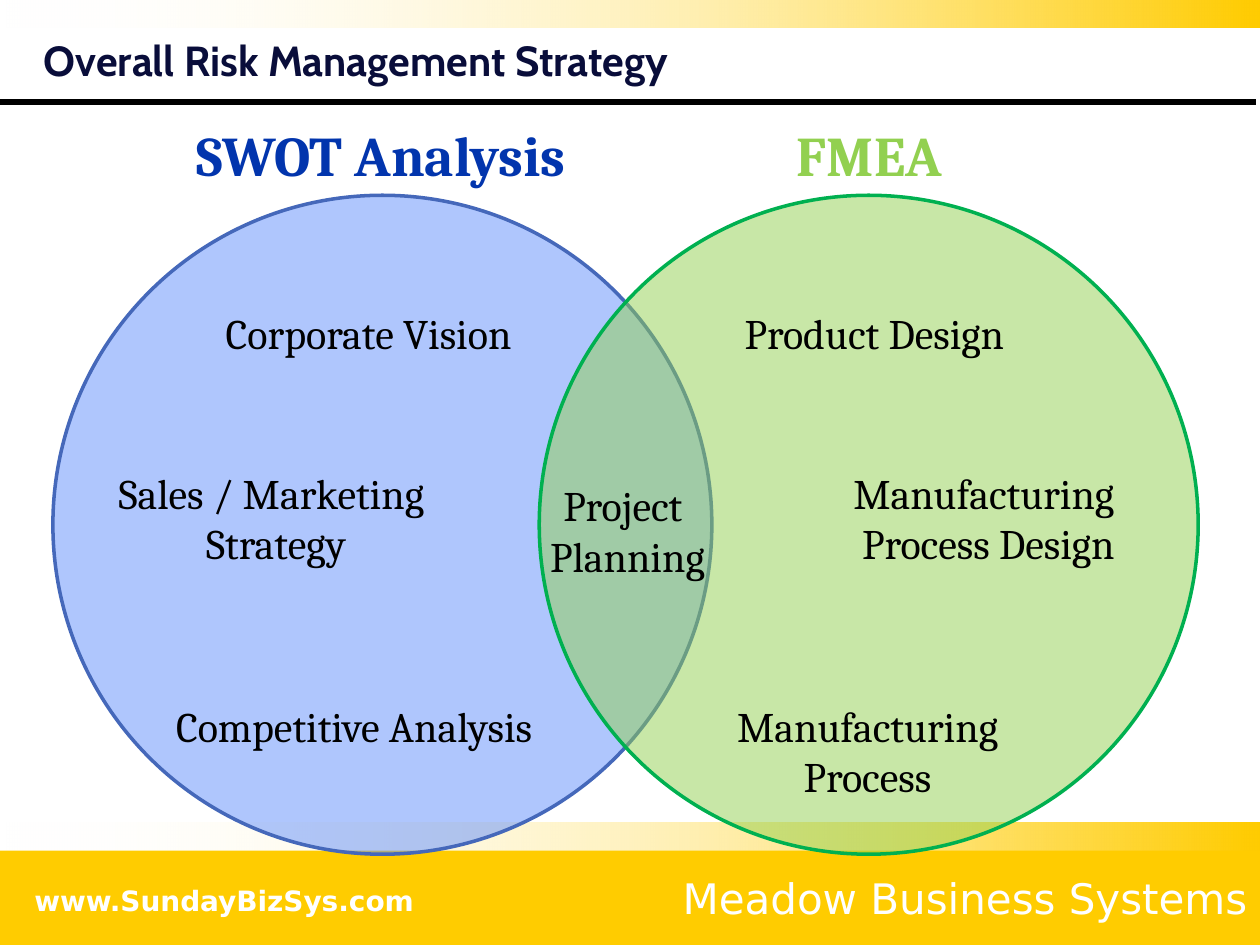
from typing import NamedTuple

from lxml import etree
from pptx import Presentation, util as u
from pptx.dml.color import RGBColor
from pptx.enum import shapes, text
from pptx.oxml import ns

GOLD, WHITE, BLACK = "FFCC00", "FFFFFF", "000000"
LEFT, MID, RIGHT = text.PP_ALIGN.LEFT, text.PP_ALIGN.CENTER, text.PP_ALIGN.RIGHT
TOP, DIAM = 1.55, 5.23


class Box(NamedTuple):
    left: float
    top: float
    width: float
    height: float


class Label(NamedTuple):
    box: Box
    lines: tuple[str, ...]
    size: int = 24
    color: str = BLACK
    bold: bool = False
    face: str = "Cambria"


class Ring(NamedTuple):
    left: float
    fill: str
    edge: str


RINGS = [Ring(0.42, "618FFD", "4568BA"), Ring(4.28, "92D050", "00B050")]
HEADS = [
    Label(Box(1.23, 0.91, 3.59, 0.64), ("SWOT Analysis",), 32, "0235AD", True),
    Label(Box(6.14, 0.91, 1.52, 0.64), ("FMEA",), 32, "92D050", True),
]
TOPICS = [
    Label(Box(0.69, 3.66, 3, 0.9), ("Sales / Marketing ", "Strategy")),
    Label(Box(4.17, 3.76, 1.62, 0.9), ("Project ", "Planning")),
    Label(Box(5.64, 2.39, 2.6, 0.5), ("Product Design",)),
    Label(Box(5.59, 5.51, 2.59, 0.9), ("Manufacturing", "Process")),
    Label(Box(6.51, 3.66, 2.67, 0.9), ("Manufacturing ", "Process Design")),
    Label(Box(1.49, 2.39, 2.87, 0.5), ("Corporate Vision",)),
    Label(Box(1.04, 5.51, 3.54, 0.5), ("Competitive Analysis",)),
]
TITLE = Label(Box(0.25, 0.25, 9.42, 0.49), ("Overall Risk Management Strategy",),
              24, "090D3A", True, "Cabin")
SITE = Label(Box(-0.1, 6.96, 3.76, 0.36), ("www.SundayBizSys.com",),
             16, WHITE, True, "DejaVu Sans")
FIRM = Label(Box(0, 6.75, 10, 0.75), ("Meadow Business Systems",),
             24, WHITE, False, "DejaVu Sans")


def rgb(code: str) -> RGBColor:
    return RGBColor.from_string(code)


def fade(shape, pct: int) -> None:
    """Set the opacity of the first fill colour."""
    tone = shape.element.xpath("./p:spPr//a:srgbClr")[0]
    etree.SubElement(tone, ns.qn("a:alpha")).set("val", str(pct * 1000))


def add_shape(slide, kind, box: Box):
    shape = slide.shapes.add_shape(kind, *map(u.Inches, box))
    shape.shadow.inherit = False
    shape.line.fill.background()
    return shape


def add_band(slide, top: float) -> None:
    band = add_shape(slide, shapes.MSO_SHAPE.RECTANGLE, Box(0, top, 10, 0.22))
    band.fill.gradient()
    band.fill.gradient_angle = 0
    for stop, tone, spot in zip(band.fill.gradient_stops, (WHITE, GOLD), (0, 1)):
        stop.color.rgb = rgb(tone)
        stop.position = spot
    fade(band, 0)


def add_ring(slide, ring: Ring) -> None:
    disc = add_shape(slide, shapes.MSO_SHAPE.OVAL, Box(ring.left, TOP, DIAM, DIAM))
    disc.fill.solid()
    disc.fill.fore_color.rgb = rgb(ring.fill)
    fade(disc, 50)
    disc.line.color.rgb = rgb(ring.edge)
    disc.line.width = u.Pt(2)


def write(frame, label: Label, align=MID, anchor=text.MSO_ANCHOR.TOP,
          wrap: bool = False, space: float = 1.0) -> None:
    frame.word_wrap = wrap
    frame.vertical_anchor = anchor
    look = {"name": label.face, "size": u.Pt(label.size), "bold": label.bold}
    for i, line in enumerate(label.lines):
        para = frame.add_paragraph() if i else frame.paragraphs[0]
        para.alignment = align
        para.line_spacing = space
        run = para.add_run()
        run.text = line
        for key, val in look.items():
            setattr(run.font, key, val)
        run.font.color.rgb = rgb(label.color)


def add_label(slide, label: Label, **style) -> None:
    box = slide.shapes.add_textbox(*map(u.Inches, label.box))
    write(box.text_frame, label, **style)


def add_rule(slide) -> None:
    rule = slide.shapes.add_connector(
        shapes.MSO_CONNECTOR.STRAIGHT, *map(u.Inches, (0, 0.81, 9.97, 0.81)))
    rule.line.color.rgb = rgb(BLACK)
    rule.line.width = u.Pt(3)
    etree.SubElement(rule.element.spPr, ns.qn("a:effectLst"))


def add_foot(slide) -> None:
    foot = add_shape(slide, shapes.MSO_SHAPE.RECTANGLE, FIRM.box)
    foot.fill.solid()
    foot.fill.fore_color.rgb = rgb(GOLD)
    write(foot.text_frame, FIRM, RIGHT, text.MSO_ANCHOR.MIDDLE, wrap=True)
    add_label(slide, SITE)


def main() -> None:
    deck = Presentation()
    deck.slide_width, deck.slide_height = u.Inches(10), u.Inches(7.5)
    slide = deck.slides.add_slide(deck.slide_layouts[6])
    add_rule(slide)
    for top in (0, 6.53):
        add_band(slide, top)
    add_foot(slide)
    add_label(slide, TITLE, align=LEFT, anchor=text.MSO_ANCHOR.MIDDLE,
              wrap=True, space=0.9)
    for ring, head in zip(RINGS, HEADS):
        add_ring(slide, ring)
        add_label(slide, head)
    for topic in TOPICS:
        add_label(slide, topic)
    deck.save("out.pptx")


if __name__ == "__main__":
    main()
